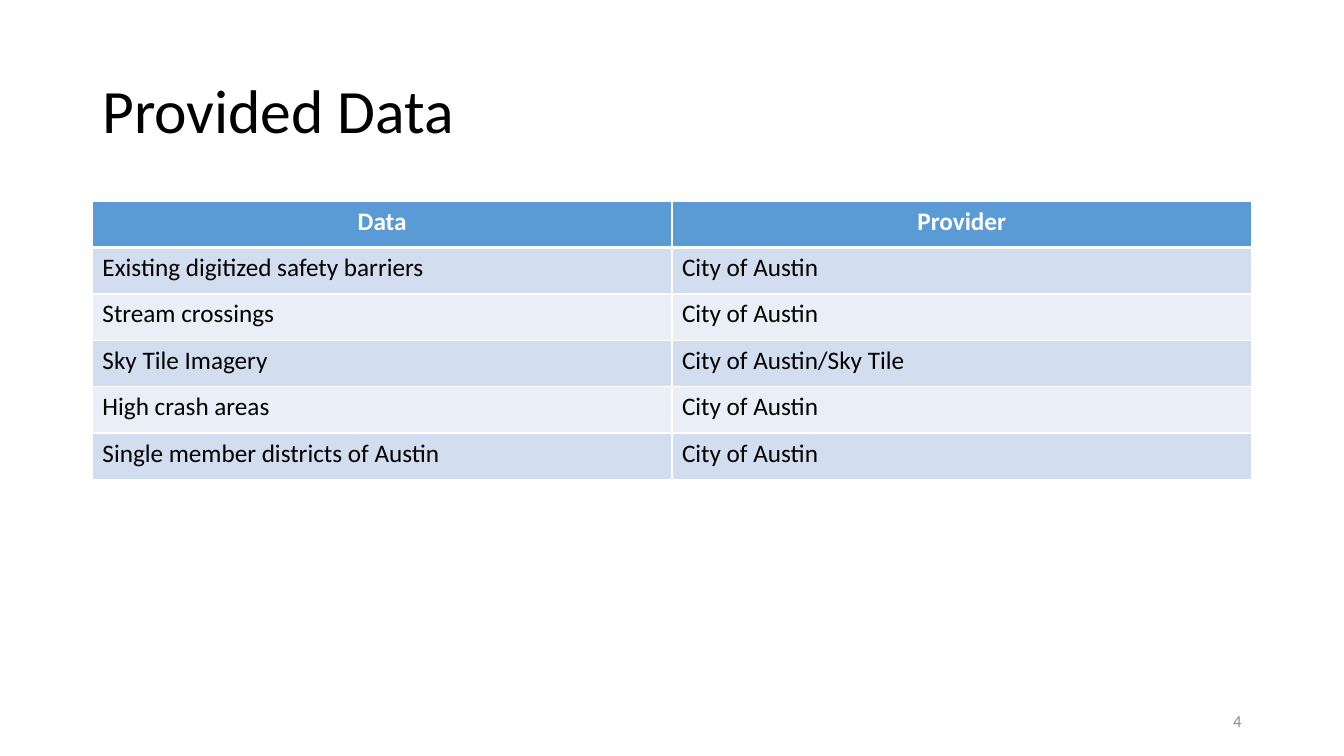
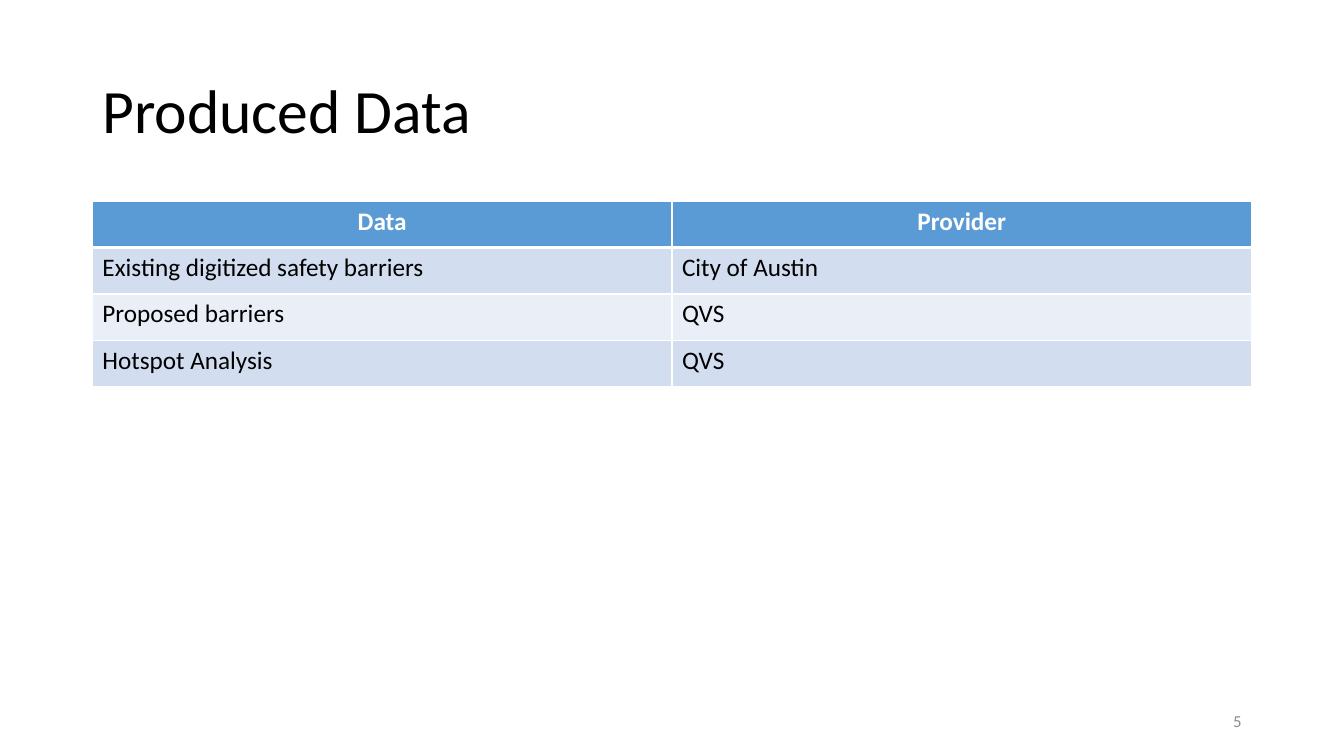
"""Build two slides that list provided and produced data in tables."""
from lxml import etree
from pptx import Presentation
from pptx.dml.color import RGBColor
from pptx.enum.text import MSO_ANCHOR, PP_ALIGN
from pptx.oxml.ns import qn
from pptx.util import Pt

FONT = "Calibri"
BLACK = RGBColor(0x00, 0x00, 0x00)
WHITE = RGBColor(0xFF, 0xFF, 0xFF)
GRAY = RGBColor(0x8C, 0x8C, 0x8C)
BLUE = RGBColor(0x5B, 0x9B, 0xD5)
BANDS = [RGBColor(0xEA, 0xEF, 0xF7), RGBColor(0xD2, 0xDE, 0xEF)]
LEFT, WIDTH, ROW_HEIGHT = 66, 828, 33.12
HEADER = ("Data", "Provider")

SLIDES = [
    (4, "Provided Data", [
        ("Existing digitized safety barriers", "City of Austin"),
        ("Stream crossings", "City of Austin"),
        ("Sky Tile Imagery", "City of Austin"
         "/Sky Tile"),
        ("High crash areas", "City of Austin"),
        ("Single member districts of Austin", "City of Austin"),
    ]),
    (5, "Produced Data", [
        ("Existing digitized safety barriers", "City of Austin"),
        ("Proposed barriers", "QVS"),
        ("Hotspot Analysis", "QVS"),
    ]),
]


def write(tf, text, size=18, color=BLACK, bold=False, align=PP_ALIGN.LEFT, spacing=1.0):
    p = tf.paragraphs[0]
    p.alignment = align
    p.line_spacing = spacing
    r = p.add_run()
    r.text = text
    r.font.name = FONT
    r.font.size = Pt(size)
    r.font.bold = bold
    r.font.color.rgb = color


def set_border(cell, side, width):
    ln = etree.SubElement(cell._tc.get_or_add_tcPr(), qn(f"a:ln{side}"), w=str(Pt(width)))
    fill = etree.SubElement(ln, qn("a:solidFill"))
    etree.SubElement(fill, qn("a:srgbClr"), val=str(WHITE))


prs = Presentation()
prs.slide_width, prs.slide_height = Pt(960), Pt(540)

for number, title, entries in SLIDES:
    s = prs.slides.add_slide(prs.slide_layouts[6])

    boxes = [
        (title, (LEFT, 28.75, WIDTH, 104.4), dict(size=44, spacing=0.9)),
        (str(number), (678, 500.5, 216, 28.75),
         dict(size=12, color=GRAY, align=PP_ALIGN.RIGHT)),
    ]
    for text, place, style in boxes:
        tf = s.shapes.add_textbox(*map(Pt, place)).text_frame
        tf.word_wrap = True
        tf.vertical_anchor = MSO_ANCHOR.MIDDLE
        write(tf, text, **style)

    rows = [HEADER, *entries]
    table = s.shapes.add_table(len(rows), len(HEADER), Pt(LEFT), Pt(143.75),
                               Pt(WIDTH), Pt(ROW_HEIGHT * len(rows))).table
    for i, row in enumerate(rows):
        table.rows[i].height = Pt(ROW_HEIGHT)
        head = i == 0
        style = dict(color=WHITE, bold=True, align=PP_ALIGN.CENTER) if head else {}
        for j, text in enumerate(row):
            cell = table.cell(i, j)
            for side in "LRTB":
                thick = (head and side == "B") or (i == 1 and side == "T")
                set_border(cell, side, 3 if thick else 1)
            cell.fill.solid()
            cell.fill.fore_color.rgb = BLUE if head else BANDS[i % 2]
            write(cell.text_frame, text, **style)

prs.save("out.pptx")
